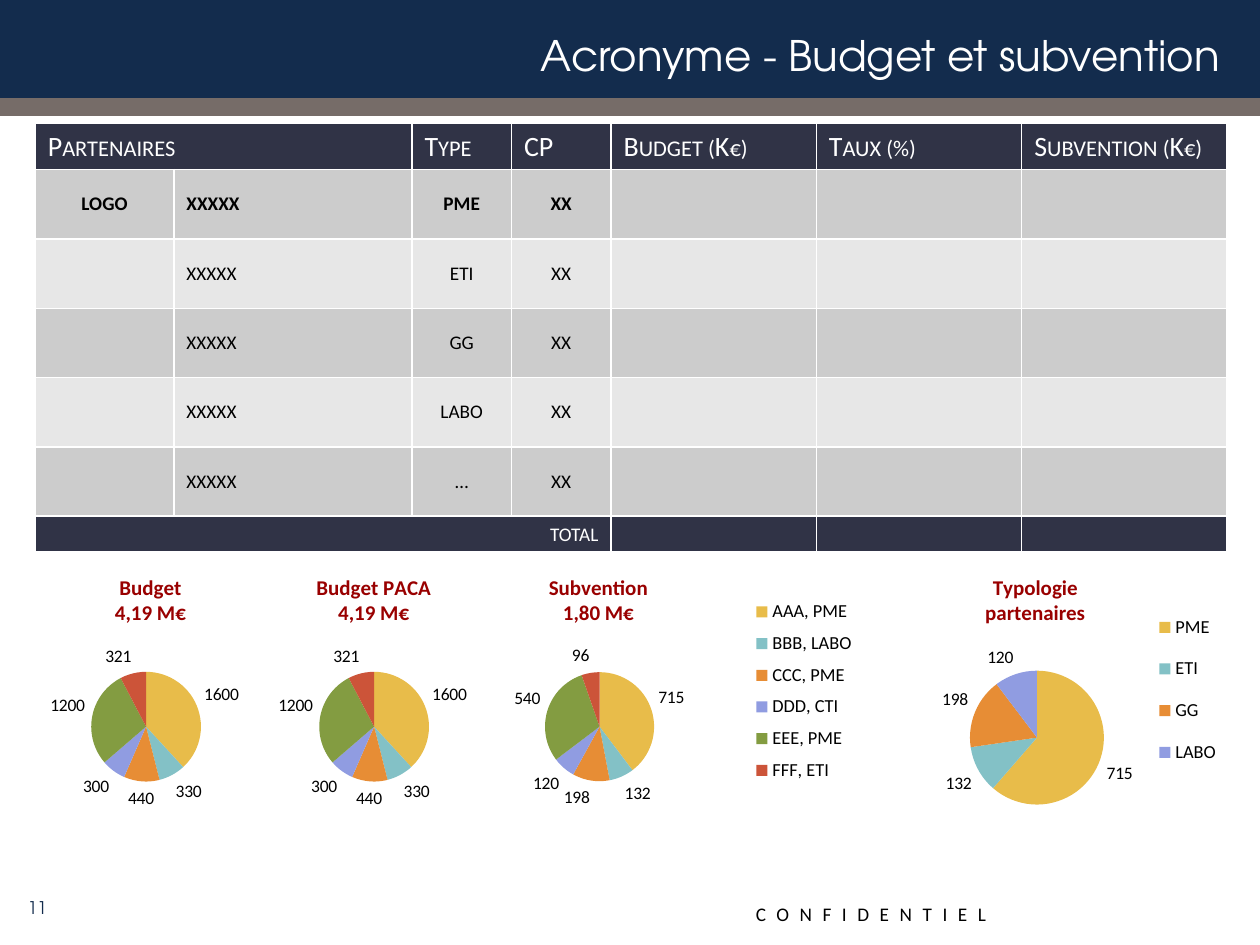
"""Build the budget and grant slide: a partner table above four pie charts."""
from dataclasses import dataclass

from lxml import etree
from pptx import Presentation
from pptx.chart.data import CategoryChartData
from pptx.dml.color import RGBColor
from pptx.enum.chart import XL_CHART_TYPE, XL_LABEL_POSITION, XL_LEGEND_POSITION
from pptx.enum.shapes import MSO_SHAPE
from pptx.enum.text import MSO_ANCHOR, PP_ALIGN
from pptx.oxml.ns import qn
from pptx.slide import Slide
from pptx.table import _Cell
from pptx.text.text import Font, _Paragraph
from pptx.util import Inches, Pt

PIE = XL_CHART_TYPE.PIE
OUT = XL_LABEL_POSITION.OUTSIDE_END
SIDE = XL_LEGEND_POSITION.RIGHT
RECT = MSO_SHAPE.RECTANGLE
TOP, MID = MSO_ANCHOR.TOP, MSO_ANCHOR.MIDDLE
LEFT, MEAN, RIGHT = PP_ALIGN.LEFT, PP_ALIGN.CENTER, PP_ALIGN.RIGHT
WIDE, HIGH = 1000, 750
UNIT = Inches(0.01)


@dataclass(frozen=True)
class Theme:
    """Colours, fonts and type sizes of the slide."""
    navy: str = "132C4D"
    taupe: str = "766C68"
    dark: str = "303346"
    grey: str = "CCCCCC"
    pale: str = "E7E7E7"
    white: str = "FFFFFF"
    black: str = "000000"
    red: str = "990000"
    hues: tuple[str, ...] = ("E8BC4A", "83C1C6", "E78D35",
                             "909CE1", "839C41", "CC5439")
    body: str = "Calibri"
    show: str = "TeX Gyre Adventor"
    title: float = 24
    head: float = 16
    base: float = 18
    name: float = 12
    text: float = 11
    key: float = 10.5
    small: float = 10


@dataclass(frozen=True)
class Box:
    """A place counted in columns and rows of the slide grid."""
    x: int
    y: int
    w: int
    h: int

    def spot(self) -> tuple[int, int, int, int]:
        """Return left, top, width and height as lengths."""
        return self.x * UNIT, self.y * UNIT, self.w * UNIT, self.h * UNIT


@dataclass(frozen=True)
class Style:
    """The look of one run."""
    size: float
    tint: str
    face: str
    bold: bool = False
    caps: bool = False
    gap: int = 0


@dataclass(frozen=True)
class Pie:
    """A pie chart; inner places are shares of the chart's own size."""
    x: int
    w: int
    lines: tuple[str, str]
    cats: tuple[str, ...]
    vals: tuple[int, ...]
    head: tuple[float, float]
    plot: tuple[float, ...]
    key: tuple[float, ...] = ()


T = Theme()
TITLE = Style(T.title, T.white, T.show)
PAGE = Style(T.small, T.navy, T.show)
NOTE = Style(T.text, T.black, T.body, gap=600)
HEAD = Style(T.head, T.white, T.body, caps=True)
CELL = Style(T.text, T.black, T.body)
STRONG = Style(T.text, T.black, T.body, bold=True)
TOTAL = Style(T.text, T.white, T.body)
NAME = Style(T.name, T.red, T.body, bold=True)

COLS = (110, 189, 79, 79, 163, 163, 163)
ROWS = (30, 55, 55, 55, 55, 55, 23)
HEADS = ("Partenaires", "", "Type", "CP", "Budget (K€)", "Taux (%)", "Subvention (K€)")
KINDS = ("PME", "ETI", "GG", "LABO", "…")
ALIGNS = (MEAN, LEFT, MEAN, MEAN, LEFT, LEFT, LEFT)

NUMS = tuple("123456")
COSTS = (1600, 330, 440, 300, 1200, 321)
FIRMS = ("AAA, PME", "BBB, LABO", "CCC, PME", "DDD, CTI", "EEE, PME", "FFF, ETI")
PIES = (
    Pie(307, 433, ("Subvention", "1,80 M€"), FIRMS, (715, 132, 198, 120, 540, 96),
        (0.29, 0.06), (0.29, 0.43, 0.2, 0.41), (0.66, 0.14, 0.21, 0.73)),
    Pie(-20, 264, ("Budget", "4,19 M€"), NUMS, COSTS,
        (0.41, 0.06), (0.35, 0.43, 0.33, 0.41)),
    Pie(161, 264, ("Budget PACA", "4,19 M€"), NUMS, COSTS,
        (0.33, 0.06), (0.35, 0.43, 0.33, 0.41)),
    Pie(697, 315, ("Typologie", "partenaires"), KINDS[:4], (715, 132, 198, 120),
        (0.26, 0.06), (0.23, 0.43, 0.34, 0.49), (0.69, 0.16, 0.18, 0.68)),
)


def dress(font: Font, style: Style) -> None:
    """Set size, colour, face and weight of a font."""
    font.size, font.name, font.bold = Pt(style.size), style.face, style.bold
    font.color.rgb = RGBColor.from_string(style.tint)


def write(para: _Paragraph, text: str, style: Style) -> None:
    """Add one run to a paragraph."""
    run = para.add_run()
    run.text = text
    dress(run.font, style)
    mark = run.font._element
    if style.caps:
        mark.set("cap", "small")
    if style.gap:
        mark.set("spc", str(style.gap))


def band(slide: Slide, box: Box, tint: str) -> None:
    """Draw a plain bar."""
    bar = slide.shapes.add_shape(RECT, *box.spot())
    bar.shadow.inherit = False
    bar.fill.solid()
    bar.fill.fore_color.rgb = RGBColor.from_string(tint)
    bar.line.fill.background()


def label(slide: Slide, box: Box, text: str, style: Style, align: PP_ALIGN = RIGHT,
          anchor: MSO_ANCHOR = MID, wrap: bool = True) -> None:
    """Draw a line of text in a box."""
    frame = slide.shapes.add_textbox(*box.spot()).text_frame
    frame.word_wrap, frame.vertical_anchor = wrap, anchor
    para = frame.paragraphs[0]
    para.alignment = align
    write(para, text, style)


def fill(cell: _Cell, text: str, style: Style, tint: str, align: PP_ALIGN) -> None:
    """Set the text, edges and fill of a table cell."""
    props = cell._tc.get_or_add_tcPr()
    for side in ("lnL", "lnR", "lnT", "lnB"):
        line = etree.SubElement(props, qn(f"a:{side}"), w=str(Pt(1)))
        paint = etree.SubElement(line, qn("a:solidFill"))
        etree.SubElement(paint, qn("a:srgbClr"), val=T.white)
    cell.fill.solid()
    cell.fill.fore_color.rgb = RGBColor.from_string(tint)
    cell.vertical_anchor = MID
    para = cell.text_frame.paragraphs[0]
    para.alignment = align
    if text:
        write(para, text, style)
    else:
        etree.SubElement(para._p, qn("a:endParaRPr"), sz=str(int(T.text * 100)))


def grid(slide: Slide, box: Box) -> None:
    """Draw the table of partners."""
    table = slide.shapes.add_table(len(ROWS), len(COLS), *box.spot()).table
    table.first_row = table.horz_banding = False
    for col, wide in zip(table.columns, COLS):
        col.width = wide * UNIT
    for row, high in zip(table.rows, ROWS):
        row.height = high * UNIT
    last = len(ROWS) - 1
    table.cell(0, 0).merge(table.cell(0, 1))
    table.cell(last, 0).merge(table.cell(last, 3))
    for col, (head, align) in enumerate(zip(HEADS, ALIGNS)):
        fill(table.cell(0, col), head, HEAD, T.dark, LEFT)
        fill(table.cell(last, col), "" if col else "TOTAL", TOTAL, T.dark, RIGHT)
        for row, kind in enumerate(KINDS, 1):
            first = row == 1
            texts = ("LOGO" if first else "", "XXXXX", kind, "XX", "", "", "")
            fill(table.cell(row, col), texts[col], STRONG if first else CELL,
                 T.grey if row % 2 else T.pale, align)


def place(node: etree._Element, shares: tuple[float, ...], inner: bool = False) -> None:
    """Put a manual layout just before a chart node."""
    for old in node.getparent().findall(qn("c:layout")):
        node.getparent().remove(old)
    layout = etree.Element(qn("c:layout"))
    node.addprevious(layout)
    manual = etree.SubElement(layout, qn("c:manualLayout"))
    if inner:
        etree.SubElement(manual, qn("c:layoutTarget"), val="inner")
    for tag in ("xMode", "yMode"):
        etree.SubElement(manual, qn(f"c:{tag}"), val="edge")
    for tag, share in zip("xywh", shares):
        etree.SubElement(manual, qn(f"c:{tag}"), val=str(share))


def draw(slide: Slide, pie: Pie) -> None:
    """Draw a pie chart with its title, labels and key."""
    data = CategoryChartData()
    data.categories = pie.cats
    data.add_series("Series 1", pie.vals)
    box = Box(pie.x, 439, pie.w, 217)
    chart = slide.shapes.add_chart(PIE, *box.spot(), data).chart
    dress(chart.font, Style(T.base, T.black, T.body))
    chart.has_title = True
    title = chart.chart_title
    frame = title.text_frame
    for para, text in zip((frame.paragraphs[0], frame.add_paragraph()), pie.lines):
        write(para, text, NAME)
    place(title._element.find(qn("c:overlay")), pie.head)
    plot = chart.plots[0]
    plot.vary_by_categories = True
    place(plot._element, pie.plot, inner=True)
    ring = plot.series[0]
    for spot, tint in zip(range(len(pie.vals)), T.hues):
        paint = ring.points[spot].format.fill
        paint.solid()
        paint.fore_color.rgb = RGBColor.from_string(tint)
    tags = ring.data_labels
    tags.show_value, tags.position = True, OUT
    dress(tags.font, Style(T.small, T.black, T.body))
    chart.has_legend = bool(pie.key)
    if pie.key:
        key = chart.legend
        key.position, key.include_in_layout = SIDE, False
        dress(key.font, Style(T.key, T.black, T.body))
        place(key._element.find(qn("c:overlay")), pie.key)


def main() -> None:
    """Build and save the slide."""
    deck = Presentation()
    deck.slide_width, deck.slide_height = WIDE * UNIT, HIGH * UNIT
    slide = deck.slides.add_slide(deck.slide_layouts[6])
    band(slide, Box(0, 0, WIDE, 90), T.navy)
    band(slide, Box(0, 78, WIDE, 14), T.taupe)
    label(slide, Box(590, 711, 213, 29), "CONFIDENTIEL", NOTE, LEFT, TOP, False)
    label(slide, Box(15, 14, 963, 58), "Acronyme - Budget et subvention", TITLE)
    label(slide, Box(-4, 700, 51, 40), "11", PAGE)
    grid(slide, Box(28, 98, sum(COLS), sum(ROWS)))
    for pie in PIES:
        draw(slide, pie)
    deck.save("out.pptx")


if __name__ == "__main__":
    main()
